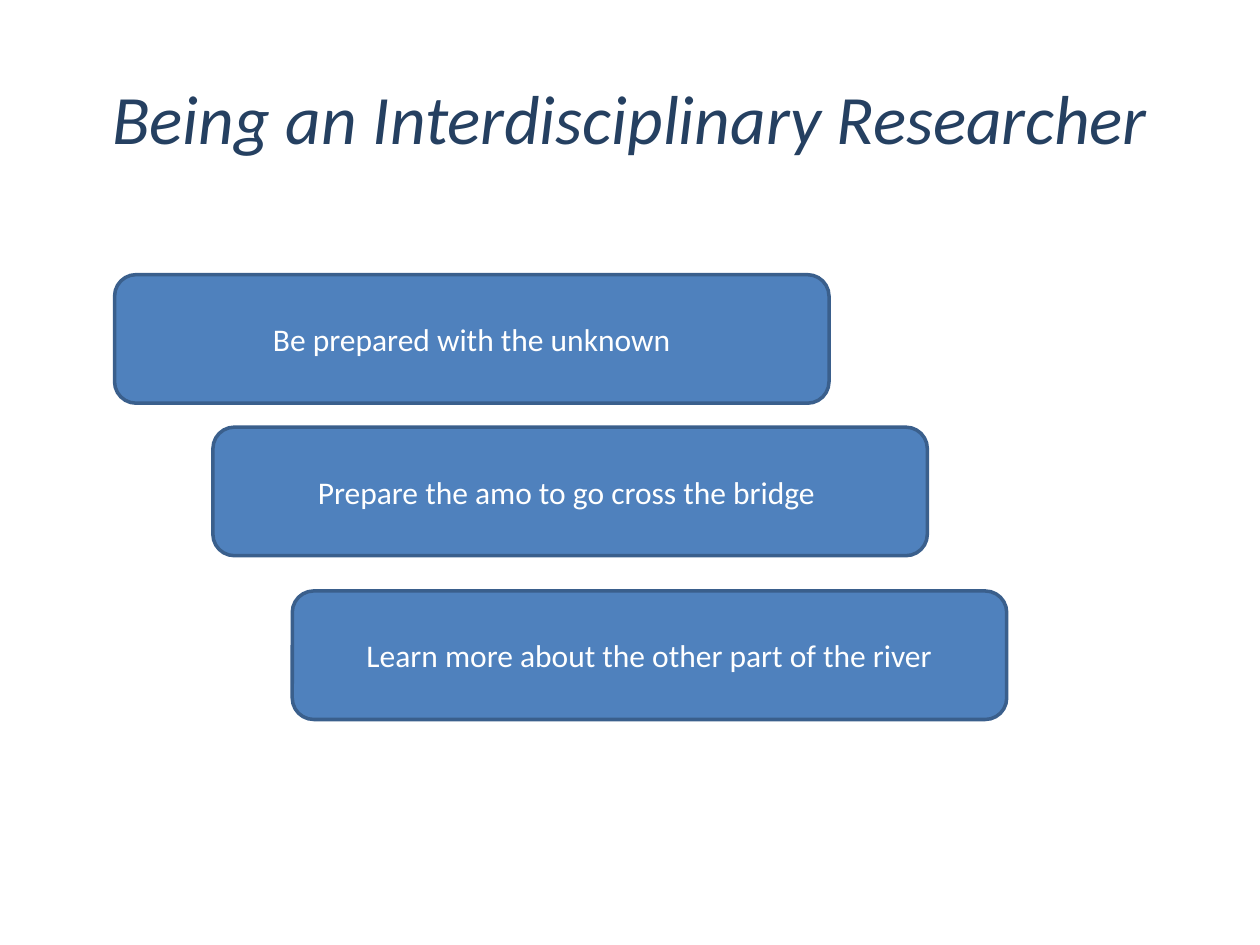
from dataclasses import dataclass

from pptx import Presentation
from pptx.dml.color import RGBColor
from pptx.enum.shapes import MSO_SHAPE
from pptx.enum.text import MSO_ANCHOR, PP_ALIGN
from pptx.shapes.autoshape import Shape
from pptx.slide import Slide
from pptx.util import Pt

FONT = "Calibri"
STEP_WIDTH = 408.24
STEP_HEIGHT = 73.44


@dataclass(frozen=True)
class Step:
    text: str
    left: float
    top: float


STEPS = [
    Step("Be prepared with the unknown", 65.52, 156.96),
    Step("Prepare the amo to go cross the bridge ", 121.68, 244.08),
    Step("Learn more about the other part of the river", 167.04, 337.68),
]


def color(value: str) -> RGBColor:
    return RGBColor.from_string(value)


def write_centred(shape: Shape, text: str, size: float, text_color: str, italic: bool = False) -> None:
    text_frame = shape.text_frame
    text_frame.word_wrap = True
    text_frame.vertical_anchor = MSO_ANCHOR.MIDDLE
    text_frame.text = text
    paragraph = text_frame.paragraphs[0]
    paragraph.alignment = PP_ALIGN.CENTER
    font = paragraph.runs[0].font
    font.name = FONT
    font.size = Pt(size)
    font.italic = italic
    font.color.rgb = color(text_color)


def draw_title(slide: Slide, text: str) -> None:
    title = slide.shapes.add_textbox(Pt(36), Pt(21.6), Pt(648), Pt(90))
    write_centred(title, text, 39.6, "254061", italic=True)


def draw_step(slide: Slide, step: Step) -> None:
    shape = slide.shapes.add_shape(
        MSO_SHAPE.ROUNDED_RECTANGLE, Pt(step.left), Pt(step.top), Pt(STEP_WIDTH), Pt(STEP_HEIGHT)
    )
    shape.shadow.inherit = False
    shape.fill.solid()
    shape.fill.fore_color.rgb = color("4F81BD")
    shape.line.color.rgb = color("3A5F8C")
    shape.line.width = Pt(2)
    write_centred(shape, step.text, 18, "FFFFFF")


def main() -> None:
    presentation = Presentation()
    presentation.slide_width = Pt(720)
    presentation.slide_height = Pt(540)
    slide = presentation.slides.add_slide(presentation.slide_layouts[6])
    draw_title(slide, "Being an Interdisciplinary Researcher")
    for step in STEPS:
        draw_step(slide, step)
    presentation.save("out.pptx")


if __name__ == "__main__":
    main()
